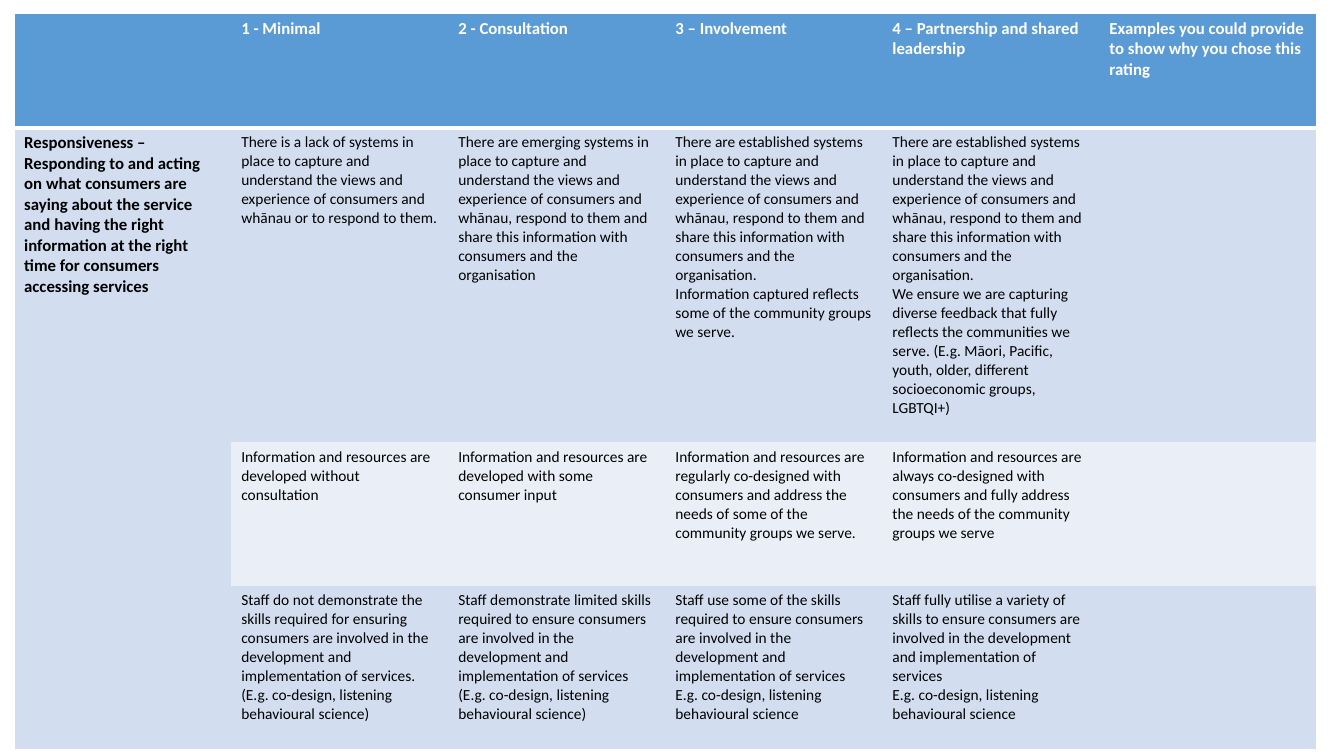
from dataclasses import dataclass

from lxml import etree
from pptx import Presentation
from pptx import util as u
from pptx.dml import color
from pptx.oxml import ns

COLORS = {
    "header": "5B9BD5",
    "band": "D2DEEF",
    "light": "EAEFF7",
    "white": "FFFFFF",
    "black": "000000",
}
FONT = "Calibri"
NO_GRID_STYLE = "{2D5ABB26-0587-4C30-8999-92F81FD0307C}"
COLUMN_WIDTH = 2.153


@dataclass
class Level:
    """One row of the rubric; each cell is a list of paragraphs."""
    height: float
    fill: str
    cells: list[list[str]]
    size: float = 11
    bold: bool = False
    ink: str = "black"


SKILLS_EXAMPLE = "E.g. co-design, listening behavioural science"
SKILLS_PURPOSE = ("required to ensure consumers are involved in the development "
                  "and implementation of services")
ESTABLISHED = ("There are established systems in place to capture and understand the views "
               "and experience of consumers and whānau, respond to them and share this "
               "information with consumers and the organisation.")
CRITERION = [
    "Responsiveness –",
    "Responding to and acting on what consumers are saying about the service and having "
    "the right information at the right time for consumers accessing services",
]

LEVELS = [
    Level(1.14, "header", [
        [],
        ["1 - Minimal"],
        ["2 - Consultation"],
        ["3 – Involvement"],
        ["4 – Partnership and shared leadership"],
        ["Examples you could provide to show why you chose this rating"],
    ], size=12, bold=True, ink="white"),
    Level(3.12, "band", [
        [],
        ["There is a lack of systems in place to capture and understand the views and "
         "experience of consumers and whānau or to respond to them."],
        ["There are emerging systems in place to capture and understand the views and "
         "experience of consumers and whānau, respond to them and share this information "
         "with consumers and the organisation"],
        [ESTABLISHED,
         "Information captured reflects some of the community groups we serve."],
        [ESTABLISHED,
         "We ensure we are capturing diverse feedback that fully reflects the communities "
         "we serve. (E.g. Māori, Pacific, youth, older, different socioeconomic groups, "
         "LGBTQI+)"],
        [],
    ]),
    Level(1.42, "light", [
        [],
        ["Information and resources are developed without consultation"],
        ["Information and resources are developed with some consumer input"],
        ["Information and resources are regularly co-designed with consumers and address "
         "the needs of some of the community groups we serve."],
        ["Information and resources are always co-designed with consumers and fully "
         "address the needs of the community groups we serve"],
        [],
    ]),
    Level(1.63, "band", [
        [],
        ["Staff do not demonstrate the skills required for ensuring consumers are involved "
         f"in the development and implementation of services. ({SKILLS_EXAMPLE})"],
        [f"Staff demonstrate limited skills {SKILLS_PURPOSE}", f"({SKILLS_EXAMPLE})"],
        [f"Staff use some of the skills {SKILLS_PURPOSE}", SKILLS_EXAMPLE],
        ["Staff fully utilise a variety of skills to ensure consumers are involved in the "
         "development and implementation of services", SKILLS_EXAMPLE],
        [],
    ]),
]


def write(cell, paragraphs: list[str], size: float, bold: bool, ink: str) -> None:
    frame = cell.text_frame
    for index, wording in enumerate(paragraphs):
        paragraph = frame.paragraphs[0] if index == 0 else frame.add_paragraph()
        run = paragraph.add_run()
        run.text = wording
        run.font.name = FONT
        run.font.size = u.Pt(size)
        run.font.bold = bold
        run.font.color.rgb = color.RGBColor.from_string(COLORS[ink])


def add_border(cell, side: str, points: float) -> None:
    line = etree.SubElement(cell._tc.get_or_add_tcPr(), ns.qn(f"a:ln{side}"),
                            w=str(u.Pt(points)))
    solid = etree.SubElement(line, ns.qn("a:solidFill"))
    etree.SubElement(solid, ns.qn("a:srgbClr"), val=COLORS["white"])


def add_borders(cell, row: int, column: int, last_row: int, last_column: int) -> None:
    # White outer frame, with a thicker rule under the header
    if column == 0:
        add_border(cell, "L", 1)
    if column == last_column:
        add_border(cell, "R", 1)
    if row == 0:
        add_border(cell, "T", 1)
        add_border(cell, "B", 3)
    elif row == last_row or column == 0:
        add_border(cell, "B", 1)


def add_rubric(slide, levels: list[Level]) -> None:
    columns = len(levels[0].cells)
    rubric = slide.shapes.add_table(
        len(levels), columns, u.Inches(0.14), u.Inches(0.13),
        u.Inches(COLUMN_WIDTH * columns),
        u.Inches(sum(level.height for level in levels))).table
    rubric._tbl.tblPr.find(ns.qn("a:tableStyleId")).text = NO_GRID_STYLE
    for column in rubric.columns:
        column.width = u.Inches(COLUMN_WIDTH)

    # Rating levels
    for row, level in enumerate(levels):
        rubric.rows[row].height = u.Inches(level.height)
        for column, paragraphs in enumerate(level.cells):
            cell = rubric.cell(row, column)
            add_borders(cell, row, column, len(levels) - 1, columns - 1)
            cell.fill.solid()
            fill = level.fill if column or row == 0 else "band"
            cell.fill.fore_color.rgb = color.RGBColor.from_string(COLORS[fill])
            write(cell, paragraphs, level.size, level.bold, level.ink)

    # Criterion spanning every row under the header
    criterion = rubric.cell(1, 0)
    criterion.merge(rubric.cell(len(levels) - 1, 0))
    write(criterion, CRITERION, 12, True, "black")


def main() -> None:
    deck = Presentation()
    deck.slide_width, deck.slide_height = u.Inches(13.33), u.Inches(7.5)
    slide = deck.slides.add_slide(deck.slide_layouts[6])
    add_rubric(slide, LEVELS)
    deck.save("out.pptx")


if __name__ == "__main__":
    main()
